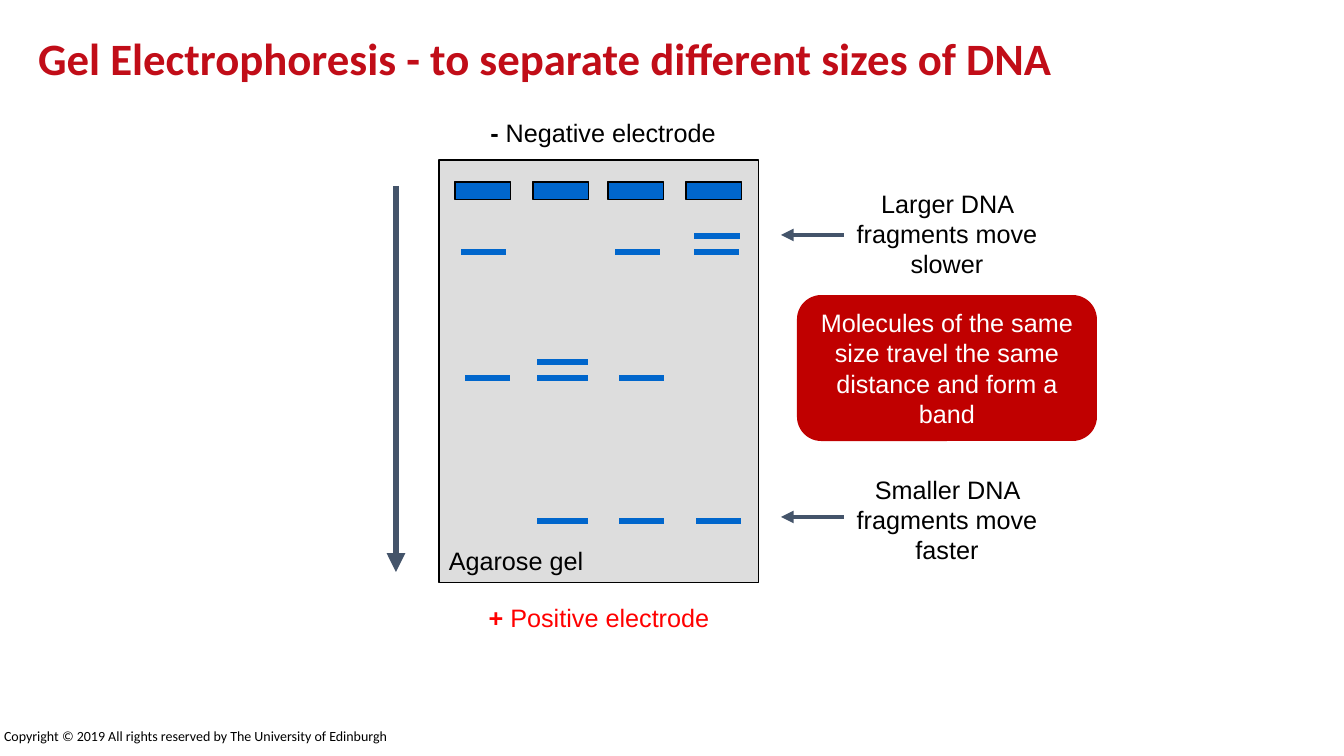
from lxml.etree import SubElement
from pptx import Presentation
from pptx.dml.color import RGBColor
from pptx.enum.shapes import MSO_CONNECTOR as Link, MSO_SHAPE as Kind
from pptx.enum.text import MSO_ANCHOR as Anchor, PP_ALIGN as Align
from pptx.oxml.ns import qn
from pptx.util import Pt

SCALE = 914400 / 100.8
BLACK = RGBColor(0, 0, 0)
WHITE = RGBColor(255, 255, 255)
GREY = RGBColor(0xDD, 0xDD, 0xDD)
BLUE = RGBColor(0, 0x66, 0xCC)
SLATE = RGBColor(0x44, 0x54, 0x6A)
RED = RGBColor(255, 0, 0)
CRIMSON = RGBColor(0xC0, 0, 0)
BRAND = RGBColor(0xC1, 0x0D, 0x18)

WELLS = (16, 94, 169, 247)
BANDS = (
    (76, ((255, 46),)),
    (92, ((255, 45), (176, 45), (22, 45))),
    (202, ((98, 51),)),
    (218, ((98, 51), (180, 45), (26, 45))),
    (361, ((98, 51), (257, 45), (180, 45))),
)


def px(*nums):
    return [round(num * SCALE) for num in nums]


def style(para, color, size=18, font="Arial", align=Align.CENTER):
    para.alignment = align
    para.font.size = Pt(size)
    para.font.name = font
    para.font.color.rgb = color


def label(slide, box, text, color=BLACK, lead=""):
    frame = slide.shapes.add_textbox(*px(*box)).text_frame
    frame.word_wrap = True
    para = frame.paragraphs[0]
    if lead:
        sign = para.add_run()
        sign.text = lead
        sign.font.bold = True
    para.add_run().text = text
    style(para, color)
    return frame


def block(slide, box, fill, line=None, kind=Kind.RECTANGLE):
    shape = slide.shapes.add_shape(kind, *px(*box))
    shape.shadow.inherit = False
    shape.fill.solid()
    shape.fill.fore_color.rgb = fill
    if line is None:
        shape.line.fill.background()
    else:
        shape.line.color.rgb = line
        shape.line.width = Pt(0.75)
    return shape


def stroke(slide, ends, color, width, arrow=False):
    line = slide.shapes.add_connector(Link.STRAIGHT, *px(*ends))
    line.line.color.rgb = color
    line.line.width = Pt(width)
    props = line._element.spPr
    if arrow:
        SubElement(props.find(qn("a:ln")), qn("a:tailEnd"), type="triangle")
    SubElement(props, qn("a:effectLst"))


def heading(slide, box):
    title = slide.shapes.title
    title.left, title.top, title.width, title.height = px(*box)
    frame = title.text_frame
    frame.text = "Gel Electrophoresis - to separate different sizes of DNA"
    frame.vertical_anchor = Anchor.MIDDLE
    para = frame.paragraphs[0]
    style(para, BRAND, 32, "Calibri", Align.LEFT)
    para.font.bold = True
    para.line_spacing = 0.9


def gel(slide, box):
    left, top, width, height = box
    block(slide, box, GREY, BLACK)
    for fill, drop in ((WHITE, 22), (BLUE, 23)):
        for well in WELLS:
            block(slide, (left + well, top + drop, 56, 17), fill, BLACK)
    for drop, row in BANDS:
        for start, span in row:
            x, y = left + start, top + drop
            stroke(slide, (x + span, y, x, y), BLUE, 4.5)
    stroke(slide, (left - 43, top + 26, left - 43, top + 412), SLATE, 4.5, True)
    label(slide, (left + 4, top - 48, width, 40), " Negative electrode", lead="-")
    label(slide, (left, top + height + 14, width, 40), " Positive electrode",
          RED, "+")
    label(slide, (left - 13, top + 380, 180, 40), "Agarose gel")


def notes(slide, box):
    left, top, width, height = box
    for drop, shift, text in (
        (0, 52, "Larger DNA fragments move slower"),
        (286, 48, "Smaller DNA fragments move faster"),
    ):
        label(slide, (left + 53, top + drop, 226, 101), text)
        y = top + drop + shift
        stroke(slide, (left + 63, y, left, y), SLATE, 3, True)
    card = block(slide, (left + 16, top + 112, width - 16, 146), CRIMSON,
                 kind=Kind.ROUNDED_RECTANGLE)
    frame = card.text_frame
    frame.word_wrap = True
    frame.text = ("Molecules of the same size travel the same distance "
                  "and form a band")
    style(frame.paragraphs[0], WHITE)


def footer(slide, box):
    frame = label(slide, box, "Copyright © 2019 All rights reserved by "
                  "The University of Edinburgh")
    style(frame.paragraphs[0], BLACK, 10, "Calibri", Align.LEFT)
    inset = px(4)[0]
    frame.margin_left = frame.margin_right = inset
    frame.margin_top = frame.margin_bottom = inset


def main():
    deck = Presentation()
    deck.slide_width, deck.slide_height = px(1344, 756)
    slide = deck.slides.add_slide(deck.slide_layouts[5])
    heading(slide, (28, 25, 1266, 72))
    gel(slide, (439, 160, 320, 423))
    notes(slide, (781, 183, 316, 387))
    footer(slide, (0, 724, 395, 32))
    deck.save("out.pptx")


if __name__ == "__main__":
    main()
